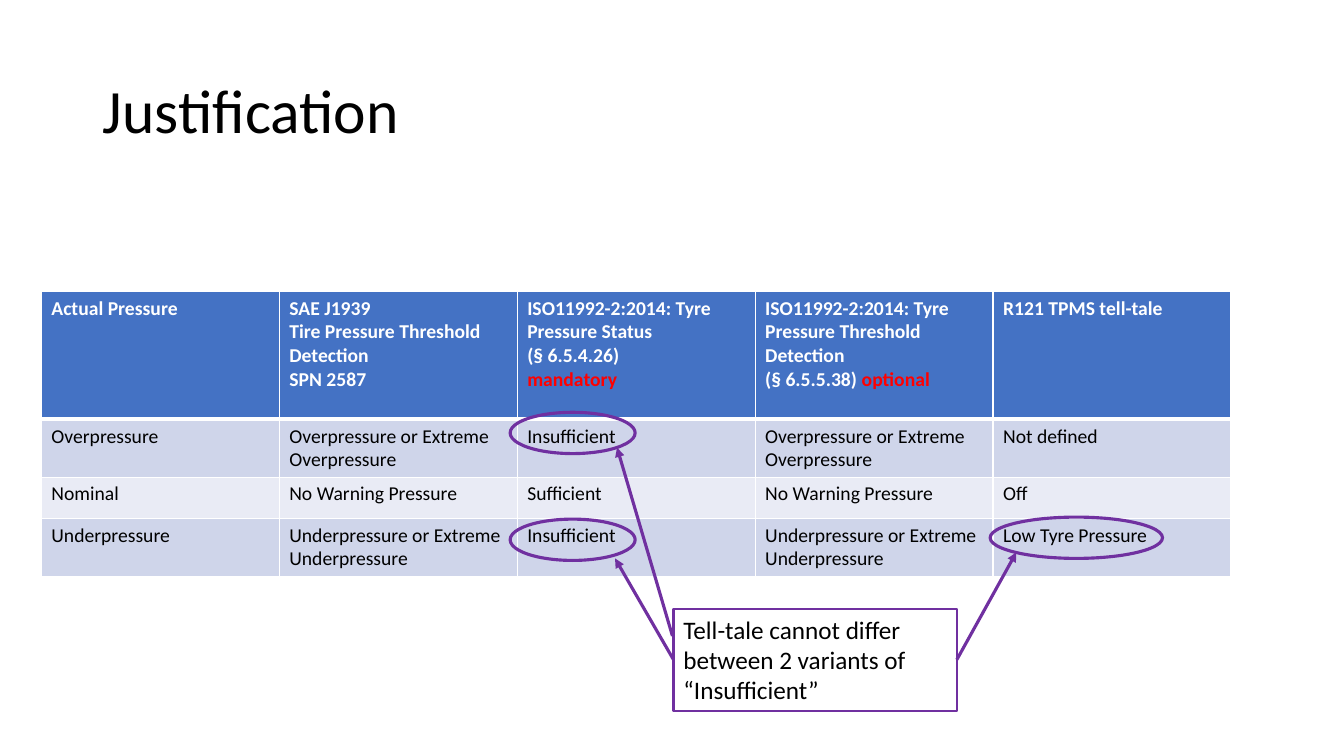
from dataclasses import dataclass
from lxml.etree import SubElement
from pptx import Presentation
from pptx.dml.color import RGBColor as Color
from pptx.enum.shapes import MSO_CONNECTOR as Connector, MSO_SHAPE as Shape
from pptx.enum.text import MSO_ANCHOR as Anchor, PP_ALIGN as Align
from pptx.oxml.ns import qn
from pptx.util import Inches, Pt

TITLE = "Justification"
HEADERS = [
    [[("Actual Pressure", False)]],
    [[("SAE J1939", False)], [("Tire Pressure Threshold Detection", False)], [("SPN 2587", False)]],
    [[("ISO11992-2:2014: Tyre Pressure Status", False)], [("(§ 6.5.4.26)", False)], [("mandatory", True)]],
    [[("ISO11992-2:2014: Tyre Pressure Threshold Detection", False)],
     [("(§ 6.5.5.38) ", False), ("optional", True)]],
    [[("R121 TPMS tell-tale", False)]],
]
ROWS = [
    ["Overpressure", "Overpressure or Extreme Overpressure", "Insufficient",
     "Overpressure or Extreme Overpressure", "Not defined"],
    ["Nominal", "No Warning Pressure", "Sufficient", "No Warning Pressure", "Off"],
    ["Underpressure", "Underpressure or Extreme Underpressure", "Insufficient",
     "Underpressure or Extreme Underpressure", "Low Tyre Pressure"],
]
NOTE = "Tell-tale cannot differ between 2 variants of “Insufficient”"

TITLE_BOX = (0.92, 0.4, 11.5, 1.45)
TABLE_LEFT, TABLE_TOP, COLUMN_WIDTH = 0.41, 2.89, 2.36
ROW_HEIGHTS = [1.27, 0.57, 0.41, 0.57]
NOTE_BOX = (6.68, 6.04, 2.81, 1.01)
RINGS = [(9.82, 5.13, 1.71, 0.41), (5.06, 5.15, 1.24, 0.41), (5.06, 4.09, 1.24, 0.41)]
ARROWS = [((6.68, 6.55), (6.1, 5.54), 1), ((6.67, 6.31), (6.12, 4.44), None), ((9.49, 6.55), (10.08, 5.48), 3)]


@dataclass(frozen=True)
class Theme:
    font: str = "Calibri"
    black: str = "000000"
    white: str = "FFFFFF"
    red: str = "FF0000"
    purple: str = "7030A0"
    header: str = "4472C4"
    bands: tuple = ("CFD5EA", "E9EBF5")
    title_size: int = 44
    note_size: int = 18
    table_size: int = 14
    mark_width: float = 2.25
    note_width: float = 1.5


theme = Theme()


def inches(values):
    return [Inches(value) for value in values]


def style_font(font, size, color, bold=False):
    font.name, font.size, font.bold = theme.font, Pt(size), bold
    font.color.rgb = Color.from_string(color)


def style_line(line, width):
    line.color.rgb = Color.from_string(theme.purple)
    line.width = Pt(width)


def fill_cell(cell, paragraphs, fill, color, edges, bold=False):
    properties = cell._tc.get_or_add_tcPr()
    for side, width in zip("LRTB", edges):
        border = SubElement(properties, qn(f"a:ln{side}"), w=str(Pt(width)))
        solid = SubElement(border, qn("a:solidFill"))
        SubElement(solid, qn("a:srgbClr"), val=theme.white)
    cell.fill.solid()
    cell.fill.fore_color.rgb = Color.from_string(fill)
    frame = cell.text_frame
    for index, runs in enumerate(paragraphs):
        paragraph = frame.add_paragraph() if index else frame.paragraphs[0]
        style_font(paragraph.font, theme.table_size, color, bold)
        for text, marked in runs:
            run = paragraph.add_run()
            run.text = text
            style_font(run.font, theme.table_size, theme.red if marked else color, bold)


def add_title(slide):
    title = slide.shapes.title
    title.left, title.top, title.width, title.height = inches(TITLE_BOX)
    title.text_frame.text = TITLE
    title.text_frame.vertical_anchor = Anchor.MIDDLE
    paragraph = title.text_frame.paragraphs[0]
    paragraph.alignment, paragraph.line_spacing = Align.LEFT, 0.9
    style_font(paragraph.font, theme.title_size, theme.black)


def add_pressure_table(slide):
    box = inches((TABLE_LEFT, TABLE_TOP, COLUMN_WIDTH * len(HEADERS), sum(ROW_HEIGHTS)))
    table = slide.shapes.add_table(len(ROW_HEIGHTS), len(HEADERS), *box).table
    for row, height in zip(table.rows, ROW_HEIGHTS):
        row.height = Inches(height)
    for column, paragraphs in enumerate(HEADERS):
        table.columns[column].width = Inches(COLUMN_WIDTH)
        fill_cell(table.cell(0, column), paragraphs, theme.header, theme.white, (1, 1, 1, 3), True)
    for row, texts in enumerate(ROWS, 1):
        for column, text in enumerate(texts):
            edges = (1, 1, 3 if row == 1 else 1, 1)
            fill_cell(table.cell(row, column), [[(text, False)]], theme.bands[(row - 1) % 2], theme.black, edges)


def add_outline(slide, kind, box, width):
    shape = slide.shapes.add_shape(kind, *inches(box))
    shape.shadow.inherit = False
    shape.fill.background()
    style_line(shape.line, width)
    return shape


def add_note(slide):
    note = add_outline(slide, Shape.RECTANGLE, NOTE_BOX, theme.note_width)
    frame = note.text_frame
    frame.text = NOTE
    frame.word_wrap = True
    frame.vertical_anchor = Anchor.TOP
    paragraph = frame.paragraphs[0]
    paragraph.alignment = Align.LEFT
    style_font(paragraph.font, theme.note_size, theme.black)
    return note


def add_arrow(slide, start, end, note, side):
    arrow = slide.shapes.add_connector(Connector.STRAIGHT, *inches(start + end))
    if side is not None:
        arrow.begin_connect(note, side)
    style_line(arrow.line, theme.mark_width)
    SubElement(arrow.line._get_or_add_ln(), qn("a:tailEnd"), type="triangle")
    SubElement(arrow._element.spPr, qn("a:effectLst"))


def main():
    presentation = Presentation()
    presentation.slide_width, presentation.slide_height = inches((13.33, 7.5))
    slide = presentation.slides.add_slide(presentation.slide_layouts[5])
    add_title(slide)
    add_pressure_table(slide)
    for ring in RINGS:
        add_outline(slide, Shape.OVAL, ring, theme.mark_width)
    note = add_note(slide)
    for start, end, side in ARROWS:
        add_arrow(slide, start, end, note, side)
    presentation.save("out.pptx")


if __name__ == "__main__":
    main()
